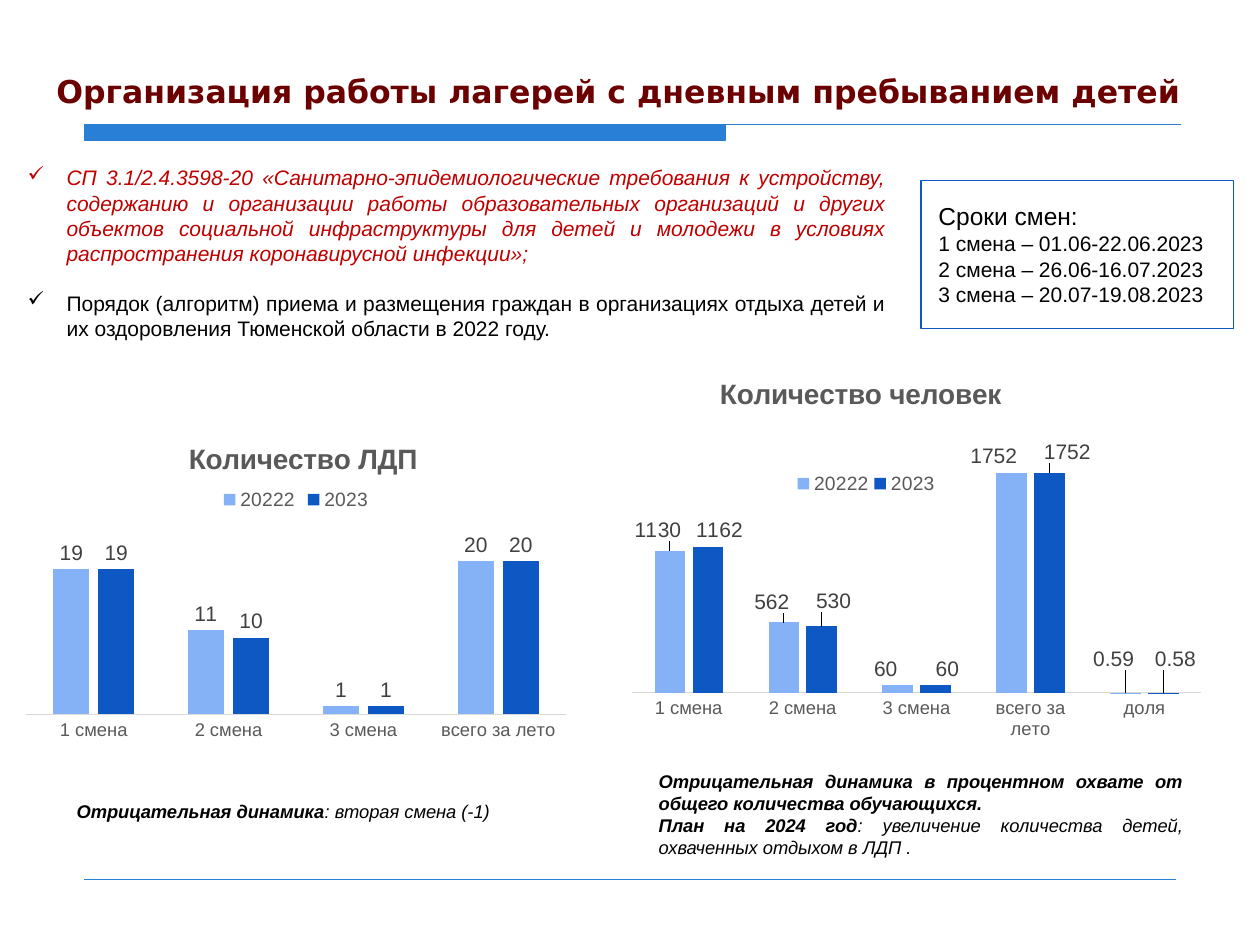
from lxml import etree
from pptx import Presentation
from pptx.chart.data import CategoryChartData
from pptx.dml.color import RGBColor
from pptx.enum.chart import XL_CHART_TYPE, XL_LABEL_POSITION, XL_LEGEND_POSITION, XL_TICK_MARK
from pptx.enum.shapes import MSO_CONNECTOR, MSO_SHAPE
from pptx.enum.text import PP_ALIGN
from pptx.oxml.ns import qn
from pptx.util import Inches, Pt

COLUMNS = XL_CHART_TYPE.COLUMN_CLUSTERED
ABOVE_BAR = XL_LABEL_POSITION.OUTSIDE_END
LEGEND_TOP = XL_LEGEND_POSITION.TOP
NO_TICK = XL_TICK_MARK.NONE
STRAIGHT = MSO_CONNECTOR.STRAIGHT
RECTANGLE = MSO_SHAPE.RECTANGLE
JUSTIFY = PP_ALIGN.JUSTIFY

COLORS = {"rule": "297FD5", "frame": "0E58C4", "title": "6C0000", "accent": "C00000",
          "text": "000000", "last_year": "85B2F6", "this_year": "0E58C4",
          "axis_text": "595959", "label": "404040", "axis": "D9D9D9"}
SHIFTS = ["1 смена", "2 смена", "3 смена", "всего за лето"]


def rgb(name):
    return RGBColor.from_string(COLORS[name])


def style_font(font, size, color="text", name="Arial", **flags):
    font.size, font.name = Pt(size), name
    font.color.rgb = rgb(color)
    for key, value in flags.items():
        setattr(font, key, value)


def add_text(slide, box, paragraphs, align=None):
    """Each paragraph is a list of (text, font format) runs."""
    frame = slide.shapes.add_textbox(*map(Inches, box)).text_frame
    frame.word_wrap = True
    for i, runs in enumerate(paragraphs):
        paragraph = frame.paragraphs[0] if i == 0 else frame.add_paragraph()
        paragraph.alignment = align
        for text, style in runs:
            run = paragraph.add_run()
            run.text = text
            style_font(run.font, **style)
    return frame


def add_check_marks(frame):
    for paragraph in frame.paragraphs:
        props = paragraph._p.get_or_add_pPr()
        props.set("marL", str(Inches(0.31)))
        props.set("indent", str(-Inches(0.31)))
        etree.SubElement(props, qn("a:buChar")).set("char", "✓")


def add_header_rule(slide):
    left, top, right = Inches(0.67), Inches(0.99), Inches(9.37)
    bar_right, bar_bottom = Inches(5.76), Inches(1.11)
    outline = slide.shapes.build_freeform(left, top)
    outline.add_line_segments([(bar_right, top), (bar_right, bar_bottom), (left, bar_bottom)])
    outline.move_to(left, top)
    outline.add_line_segments([(right, top)], close=False)
    rule = outline.convert_to_shape()
    rule.shadow.inherit = False
    rule.fill.solid()
    rule.fill.fore_color.rgb = rule.line.color.rgb = rgb("rule")
    rule.line.width = Pt(0.75)


def add_footer_rule(slide):
    rule = slide.shapes.add_connector(STRAIGHT, *map(Inches, (0.67, 6.98, 9.33, 6.98)))
    rule.line.color.rgb = rgb("rule")
    rule.line.width = Pt(0.25)
    etree.SubElement(rule._element.spPr, qn("a:effectLst"))


def add_frame(slide, box):
    frame = slide.shapes.add_shape(RECTANGLE, *map(Inches, box))
    frame.shadow.inherit = False
    frame.fill.background()
    frame.line.color.rgb = rgb("frame")
    frame.line.width = Pt(0.75)


def make_layout(inner=False, **fractions):
    """Manual chart layout; x, y, w, h are fractions of the chart."""
    layout = etree.Element(qn("c:layout"))
    manual = etree.SubElement(layout, qn("c:manualLayout"))
    values = {"layoutTarget": "inner"} if inner else {}
    if "w" in fractions:
        values.update(xMode="edge", yMode="edge")
    values.update(fractions)
    for tag, value in values.items():
        etree.SubElement(manual, qn(f"c:{tag}")).set("val", str(value))
    return layout


def place(element, layout, after=None):
    """Swap the layout of a chart part for the given one."""
    for old in element.findall(qn("c:layout")):
        element.remove(old)
    before = element.find(qn(after)) if after else None
    if before is None:
        element.insert(0, layout)
    else:
        before.addnext(layout)


def title_layout(x, y):
    layout = make_layout(xMode="edge", yMode="edge", x=x, y=y)
    return layout


def shift_labels(series, offsets):
    for i, (x, y) in enumerate(offsets):
        label = series.points[i].data_label
        style_font(label.font, 12, "label")
        label.position = ABOVE_BAR
    marks = series.data_labels._element.findall(qn("c:dLbl"))
    for mark, (x, y) in zip(marks, offsets):
        place(mark, make_layout(x=x, y=y), after="c:idx")


def add_columns(slide, box, title, categories, values, maximum, layouts, offsets=()):
    data = CategoryChartData()
    data.categories = categories
    for year, counts in zip(("20222", "2023"), values):
        data.add_series(year, counts)
    chart = slide.shapes.add_chart(COLUMNS, *map(Inches, box), data).chart
    style_font(chart.font, 10)

    chart.has_title = True
    heading = chart.chart_title.text_frame.paragraphs[0].add_run()
    heading.text = title
    style_font(heading.font, 16, "axis_text", bold=True)
    chart.chart_title.include_in_layout = False
    place(chart.chart_title._element, title_layout(*layouts["title"]), after="c:tx")

    chart.has_legend = True
    chart.legend.position = LEGEND_TOP
    chart.legend.include_in_layout = False
    style_font(chart.legend.font, 11, "axis_text")
    place(chart.legend._element, make_layout(**layouts["legend"]), after="c:legendPos")

    axis = chart.category_axis
    axis.major_tick_mark = axis.minor_tick_mark = NO_TICK
    style_font(axis.tick_labels.font, 10.5, "axis_text")
    axis.format.line.color.rgb = rgb("axis")
    axis.format.line.width = Pt(0.75)
    scale = chart.value_axis
    scale.visible = scale.has_major_gridlines = False
    scale.minimum_scale, scale.maximum_scale = 0, maximum

    plot = chart.plots[0]
    plot.gap_width, plot.overlap, plot.vary_by_categories = 150, -25, False
    place(chart._chartSpace.chart.plotArea, make_layout(True, **layouts["plot"]))
    for i, (series, color) in enumerate(zip(plot.series, ("last_year", "this_year"))):
        series.format.fill.solid()
        series.format.fill.fore_color.rgb = rgb(color)
        labels = series.data_labels
        labels.show_value, labels.position = True, ABOVE_BAR
        style_font(labels.font, 12, "label")
        if offsets:
            shift_labels(series, offsets[i])


def main():
    deck = Presentation()
    deck.slide_width, deck.slide_height = Inches(10), Inches(7.5)
    slide = deck.slides.add_slide(deck.slide_layouts[6])
    add_header_rule(slide)
    add_footer_rule(slide)
    add_frame(slide, (7.31, 1.43, 2.48, 1.18))

    body, large = {"size": 12}, {"size": 14}
    cited = {"size": 12, "color": "accent", "italic": True}
    note = {"size": 10.5, "italic": True}
    strong = {**note, "bold": True}
    add_text(slide, (0.35, 0.52, 9.24, 0.4), [[
        ("Организация работы лагерей с дневным пребыванием детей",
         {"size": 18, "color": "title", "name": "DejaVu Sans", "bold": True})]])
    add_text(slide, (0.51, 6.3, 3.81, 0.28), [[
        ("Отрицательная динамика", strong), (": вторая смена (-1)", note)]], JUSTIFY)
    add_text(slide, (5.13, 6.06, 4.36, 0.81), [
        [("Отрицательная динамика в процентном охвате от общего количества обучающихся.", strong)],
        [("План на 2024 год", strong),
         (": увеличение количества детей, охваченных отдыхом в ЛДП .", note)]], JUSTIFY)
    rules = add_text(slide, (0.12, 1.26, 7.01, 1.51), [
        [("СП 3.1/2.4.3598-20 «Санитарно-эпидемиологические требования к устройству, "
          "содержанию и организации работы образовательных организаций и других объектов "
          "социальной инфраструктуры для детей и молодежи в условиях распространения "
          "коронавирусной инфекции»;", cited)],
        [("Порядок (алгоритм) приема и размещения граждан в организациях отдыха детей "
          "и их оздоровления Тюменской области в 2022 году.", body)]], JUSTIFY)
    rules.paragraphs[1].space_before = Pt(14)
    add_check_marks(rules)
    dates = ("01.06-22.06.2023", "26.06-16.07.2023", "20.07-19.08.2023")
    add_text(slide, (7.35, 1.55, 2.44, 0.94), [[("Сроки смен:", large)]] + [
        [(f"{shift} – {date}", body)] for shift, date in zip(SHIFTS, dates)])

    add_columns(slide, (0.12, 3.28, 4.46, 2.64), "Количество ЛДП", SHIFTS,
                ((19, 11, 1, 20), (19, 10, 1, 20)), 25,
                {"title": (0.3, 0.07), "legend": {"x": 0.36, "y": 0.22, "w": 0.28, "h": 0.08},
                 "plot": {"x": 0.02, "y": 0.33, "w": 0.96, "h": 0.575}})
    add_columns(slide, (4.92, 2.61, 4.71, 3.32), "Количество человек", SHIFTS + ["доля"],
                ((1130, 562, 60, 1752, 0.59), (1162, 530, 60, 1752, 0.58)), 2000,
                {"title": (0.16, 0.1), "legend": {"x": 0.29, "y": 0.34, "w": 0.25, "h": 0.06},
                 "plot": {"x": 0.02, "y": 0.27, "w": 0.96, "h": 0.6}},
                (((-0.02, -0.01), (-0.02, -0.01), (-0.02, 0), (-0.03, 0), (-0.02, -0.04)),
                 ((0.02, 0), (0.02, -0.02), (0.02, 0), (0.03, -0.01), (0.02, -0.04))))
    deck.save("out.pptx")


if __name__ == "__main__":
    main()
